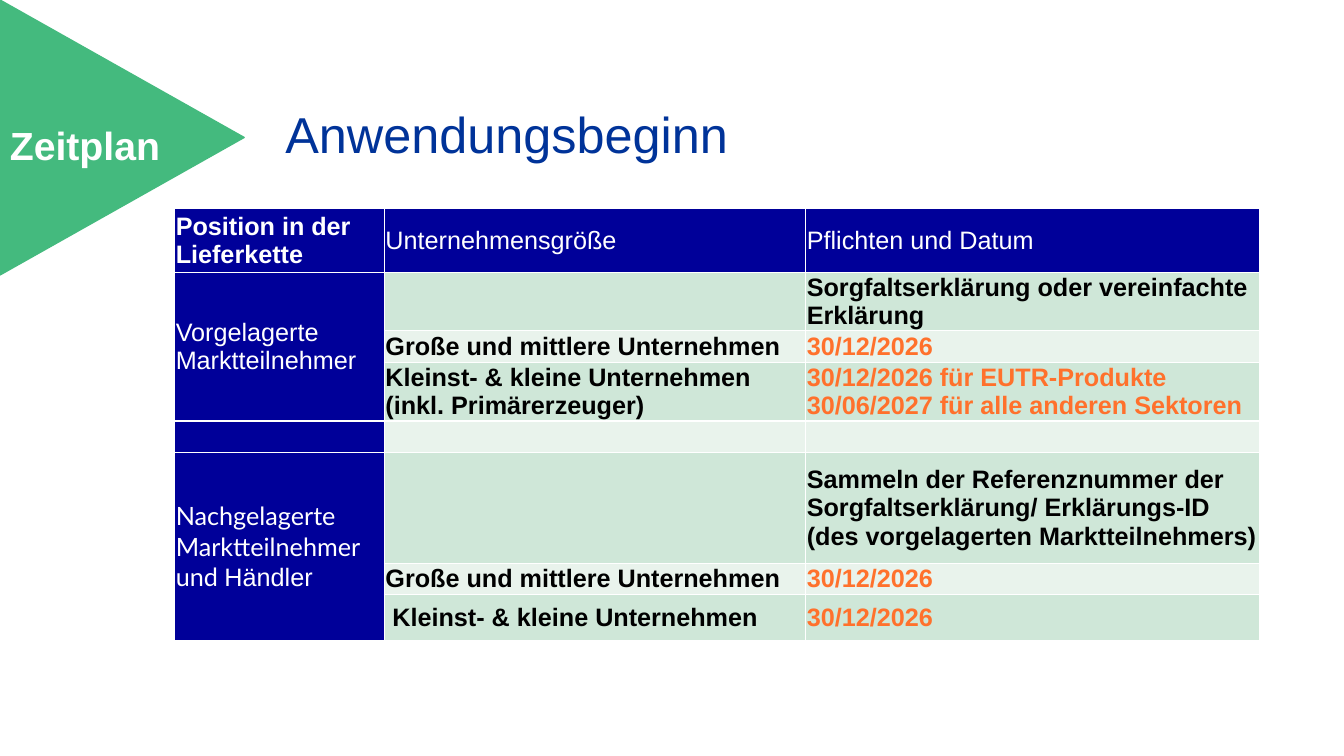
from lxml.etree import SubElement
from pptx import Presentation
from pptx.dml.color import RGBColor
from pptx.enum.shapes import MSO_SHAPE as Preset
from pptx.enum.text import MSO_ANCHOR as Anchor, MSO_AUTO_SIZE as AutoSize, PP_ALIGN as Align
from pptx.oxml.ns import qn
from pptx.util import Pt

WHITE, BLACK, NAVY, ORANGE = "FFFFFF", "000000", "000099", "FF712C"
GREEN, TITLE_BLUE, DARK_BAND, LIGHT_BAND = "44BA7E", "003399", "CFE7D8", "E9F3EC"

COLUMN_WIDTHS = [149.8, 301, 324]
ROW_HEIGHTS = [45.2, 42, 22.4, 42, 22.6, 79.2, 22.4, 32.4]
LARGE = "Große und mittlere Unternehmen"
START = "30/12/2026"
ROWS = [
    ["Position in der Lieferkette", "Unternehmensgröße", "Pflichten und Datum"],
    ["Vorgelagerte Marktteilnehmer", "", "Sorgfaltserklärung oder vereinfachte Erklärung"],
    ["", LARGE, START],
    ["", "Kleinst- & kleine Unternehmen (inkl. Primärerzeuger)",
     f"{START} für EUTR-Produkte\n30/06/2027 für alle anderen Sektoren"],
    ["", "", ""],
    ["Nachgelagerte\nMarktteilnehmer und ", "",
     "Sammeln der Referenznummer der Sorgfaltserklärung/ Erklärungs-ID "
     "(des vorgelagerten Marktteilnehmers)"],
    ["", LARGE, START],
    ["", " Kleinst- & kleine Unternehmen", START],
]
GROUP_ROWS = [1, 5]
GROUP_SIZE = 3


def rgb(value):
    return RGBColor.from_string(value)


def set_font(paragraph, size, color, bold=False, name="Arial"):
    font = paragraph.font
    font.name, font.size, font.bold = name, Pt(size), bold
    font.color.rgb = rgb(color)


def add_borders(cell, color):
    properties = cell._tc.get_or_add_tcPr()
    for side in ("lnL", "lnR", "lnT", "lnB"):
        line = SubElement(properties, qn(f"a:{side}"), w=str(Pt(1)))
        fill = SubElement(line, qn("a:solidFill"))
        SubElement(fill, qn("a:srgbClr"), val=color)


def add_title(slide, left, top, width, height):
    title = slide.shapes.title
    title.left, title.top, title.width, title.height = map(Pt, (left, top, width, height))
    title.fill.solid()
    title.fill.fore_color.rgb = rgb(WHITE)
    frame = title.text_frame
    frame.text = "Anwendungsbeginn"
    frame.auto_size = AutoSize.NONE
    frame.vertical_anchor = Anchor.MIDDLE
    paragraph = frame.paragraphs[0]
    paragraph.alignment = Align.LEFT
    paragraph.line_spacing = 0.9
    set_font(paragraph, 36, TITLE_BLUE)


def style_cell(cell, row, column, text):
    header = row == 0 or column == 0
    add_borders(cell, WHITE)
    cell.fill.solid()
    cell.fill.fore_color.rgb = rgb(NAVY if header else DARK_BAND if row % 2 else LIGHT_BAND)
    cell.vertical_anchor = Anchor.MIDDLE
    cell.margin_left = cell.margin_right = cell.margin_top = cell.margin_bottom = Pt(0.75)
    cell.text = text
    dated = column == 2 and START in text
    color = WHITE if header else ORANGE if dated else BLACK
    bold = not header or row == column == 0
    name = "Lato" if text.startswith("Nachgelagerte") else "Arial"
    for paragraph in cell.text_frame.paragraphs:
        set_font(paragraph, 18, color, bold, name)


def add_schedule(slide, left, top):
    size = Pt(sum(COLUMN_WIDTHS)), Pt(sum(ROW_HEIGHTS))
    frame = slide.shapes.add_table(len(ROWS), len(COLUMN_WIDTHS), Pt(left), Pt(top), *size)
    table = frame.table
    for column, width in zip(table.columns, COLUMN_WIDTHS):
        column.width = Pt(width)
    for row, height in zip(table.rows, ROW_HEIGHTS):
        row.height = Pt(height)
    for row, texts in enumerate(ROWS):
        for column, text in enumerate(texts):
            style_cell(table.cell(row, column), row, column, text)
    for first in GROUP_ROWS:
        table.cell(first, 0).merge(table.cell(first + GROUP_SIZE - 1, 0))
    traders = table.cell(GROUP_ROWS[1], 0).text_frame.paragraphs[-1].add_run()
    traders.text = "Händler"
    traders.font.name = "Arial"


def add_section_marker(slide, left, top, width, height):
    offset = (width - height) / 2
    triangle = slide.shapes.add_shape(
        Preset.ISOSCELES_TRIANGLE, Pt(left + offset), Pt(top - offset), Pt(height), Pt(width))
    triangle.rotation = 90
    triangle.shadow.inherit = False
    triangle.fill.solid()
    triangle.fill.fore_color.rgb = rgb(GREEN)
    triangle.line.color.rgb = rgb(GREEN)
    triangle.line.width = Pt(1)
    label = slide.shapes.add_textbox(Pt(left), Pt(top + 82.8), Pt(178.6), Pt(41))
    frame = label.text_frame
    frame.word_wrap = True
    frame.text = "Zeitplan"
    set_font(frame.paragraphs[0], 28, WHITE, True)


def main():
    presentation = Presentation()
    presentation.slide_width, presentation.slide_height = Pt(960), Pt(540)
    slide = presentation.slides.add_slide(presentation.slide_layouts[5])
    add_title(slide, 196.6, 65.5, 676, 64.8)
    add_schedule(slide, 124.8, 149.2)
    add_section_marker(slide, 0, 0, 174.4, 196.4)
    presentation.save("out.pptx")


if __name__ == "__main__":
    main()
